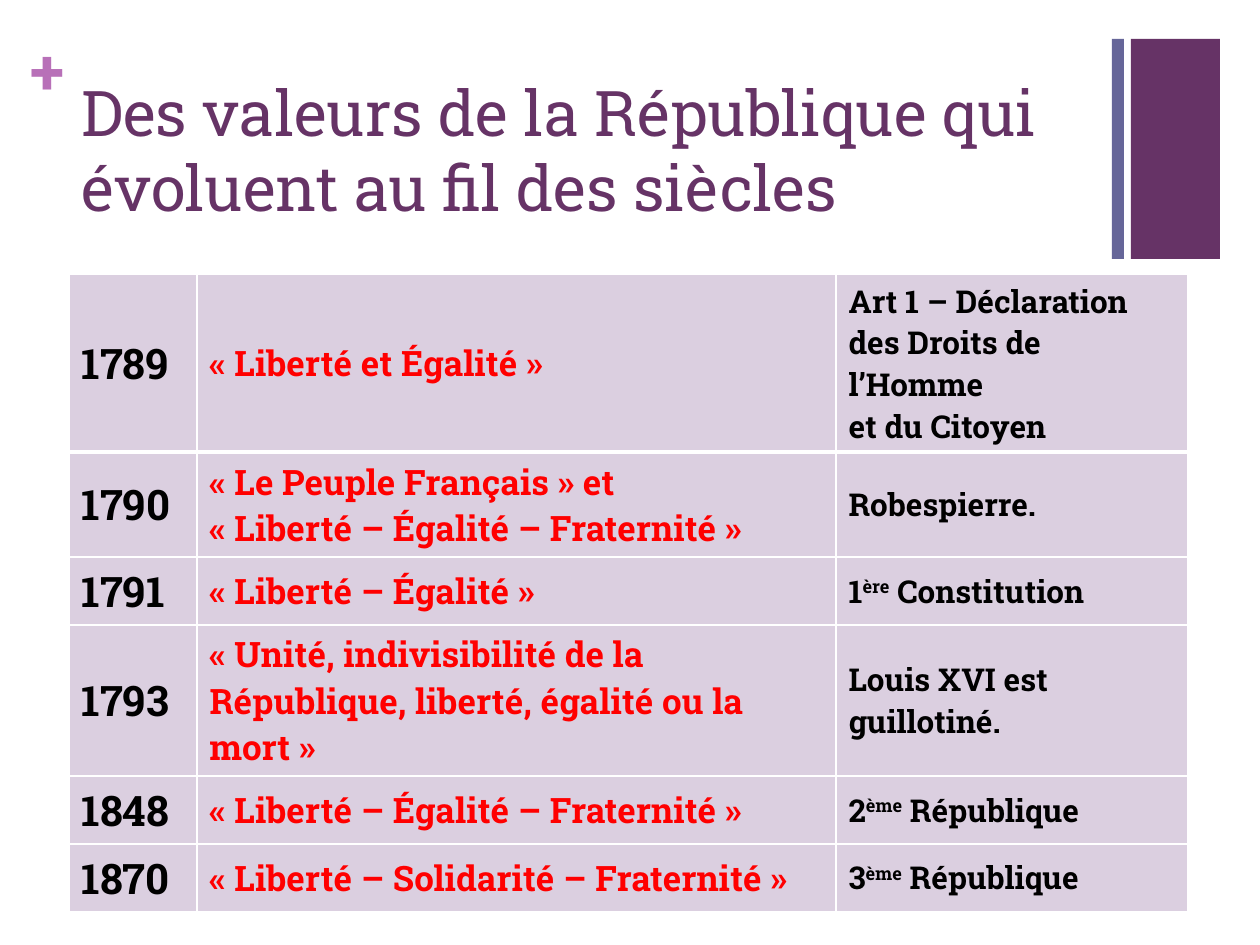
from lxml.etree import SubElement
from pptx import Presentation
from pptx.dml.color import RGBColor as Rgb
from pptx.enum.shapes import MSO_SHAPE as Shape
from pptx.enum.text import MSO_ANCHOR as Anchor
from pptx.oxml import parse_xml
from pptx.oxml.ns import nsdecls, qn
from pptx.util import Pt

EMU_PER_PX = 914400 / 126
FONT = "Roboto Slab"
COLORS = {
    "plum": "663366",
    "slate": "666699",
    "orchid": "B870B8",
    "lilac": "DBCFE0",
    "red": "FF0000",
    "black": "000000",
    "white": "FFFFFF",
}
COLUMN_WIDTHS = [128, 639, 352]
ROW_HEIGHTS = [178, 105, 68, 151, 68, 68]
COLUMN_FORMATS = [
    {"size": 24, "color": "black", "bold": True},
    {"size": 20, "color": "red", "bold": True},
    {"size": 18, "color": "black", "bold": True},
]
# A cell is a list of paragraphs; "^" encloses superscript text.
MOTTOS = [
    (["1789"], ["« Liberté et Égalité »"],
     ["Art 1 – Déclaration des Droits de l’Homme \vet du Citoyen"]),
    (["1790"], ["« Le Peuple Français » et", "« Liberté – Égalité – Fraternité »"],
     ["Robespierre."]),
    (["1791"], ["« Liberté – Égalité »"], ["1^ère^ Constitution"]),
    (["1793"], ["« Unité, indivisibilité de la République, liberté, égalité ou la mort »"],
     ["Louis XVI est guillotiné."]),
    (["1848"], ["« Liberté – Égalité – Fraternité »"], ["2^ème^ République"]),
    (["1870"], ["« Liberté – Solidarité – Fraternité »"], ["3^ème^ République"]),
]


def px(length):
    return round(length * EMU_PER_PX)


def rgb(name):
    return Rgb.from_string(COLORS[name])


def format_font(font, size, color, bold=False):
    values = {"name": FONT, "size": Pt(size), "bold": bold}
    for attribute, value in values.items():
        setattr(font, attribute, value)
    font.color.rgb = rgb(color)


def write_paragraphs(frame, texts, style):
    """Fill a text frame, raising the parts enclosed in "^"."""
    for index, text in enumerate(texts):
        paragraph = frame.add_paragraph() if index else frame.paragraphs[0]
        for part_index, part in enumerate(text.split("^")):
            for line_index, line in enumerate(part.split("\v")):
                if line_index:
                    paragraph.add_line_break()
                run = paragraph.add_run()
                run.text = line
                format_font(run.font, **style)
                if part_index % 2:
                    run.font._element.set("baseline", "30000")


def add_text(slide, box, text, style, **frame_values):
    frame = slide.shapes.add_textbox(*map(px, box)).text_frame
    for attribute, value in frame_values.items():
        setattr(frame, attribute, value)
    write_paragraphs(frame, [text], style)


def add_corner_bands(slide, left, top, width, height):
    """Draw a narrow and a wide band, parted by a small gap."""
    narrow, gap = 12, 7
    bands = [
        (left, narrow, "slate"),
        (left + narrow + gap, width - narrow - gap, "plum"),
    ]
    for band_left, band_width, color in bands:
        band = slide.shapes.add_shape(
            Shape.RECTANGLE, *map(px, (band_left, top, band_width, height)))
        band.shadow.inherit = False
        band.fill.solid()
        band.fill.fore_color.rgb = rgb(color)
        band.line.fill.background()


def add_heading(slide, left, top, width, height):
    add_text(slide, (left - 38, top - 35, 37, 77), "+",
             {"size": 36, "color": "orchid", "bold": True},
             margin_left=0, margin_top=0, margin_right=0, margin_bottom=0)
    add_text(slide, (left, top, width, height),
             "Des valeurs de la République qui évoluent au fil des siècles",
             {"size": 36, "color": "plum"}, word_wrap=True)


def set_borders(cell, widths):
    properties = cell._tc.get_or_add_tcPr()
    for index, (side, width) in enumerate(widths.items()):
        border = parse_xml(f'<a:ln{side} {nsdecls("a")} w="{Pt(width)}"/>')
        fill = SubElement(border, qn("a:solidFill"))
        SubElement(fill, qn("a:srgbClr"), val=COLORS["white"])
        properties.insert(index, border)


def add_motto_table(slide, left, top):
    box = (left, top, sum(COLUMN_WIDTHS), sum(ROW_HEIGHTS))
    table = slide.shapes.add_table(
        len(MOTTOS), len(COLUMN_WIDTHS), *map(px, box)).table
    for column, width in zip(table.columns, COLUMN_WIDTHS):
        column.width = px(width)
    for row_index, (row, motto) in enumerate(zip(table.rows, MOTTOS)):
        row.height = px(ROW_HEIGHTS[row_index])
        borders = {"L": 1, "R": 1,
                   "T": 3 if row_index == 1 else 1,
                   "B": 3 if row_index == 0 else 1}
        for cell, texts, style in zip(row.cells, motto, COLUMN_FORMATS):
            cell.fill.solid()
            cell.fill.fore_color.rgb = rgb("lilac")
            cell.vertical_anchor = Anchor.MIDDLE
            set_borders(cell, borders)
            write_paragraphs(cell.text_frame, texts, style)


def main():
    presentation = Presentation()
    presentation.slide_width, presentation.slide_height = px(1260), px(945)
    slide = presentation.slides.add_slide(presentation.slide_layouts[6])
    add_corner_bands(slide, 1112, 39, 108, 220)
    add_heading(slide, 69, 67, 1041, 154)
    add_motto_table(slide, 69, 274)
    presentation.save("out.pptx")


if __name__ == "__main__":
    main()
